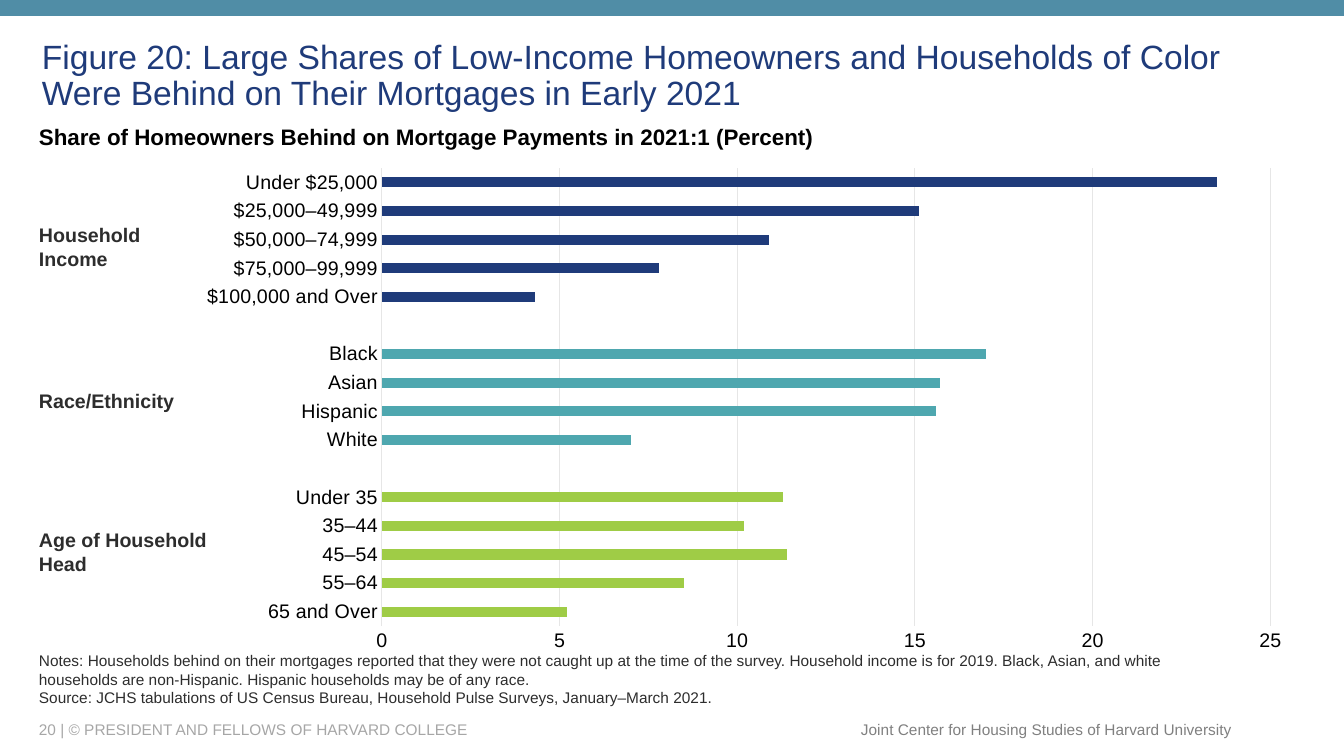
from dataclasses import dataclass

from lxml.etree import SubElement
from pptx import Presentation
from pptx.chart.data import CategoryChartData
from pptx.dml.color import RGBColor
from pptx.enum.chart import XL_CHART_TYPE, XL_TICK_MARK
from pptx.enum.shapes import MSO_SHAPE
from pptx.enum.text import MSO_ANCHOR, PP_ALIGN
from pptx.oxml.ns import qn
from pptx.util import Pt

EMU_PER_PX = 914400 / 100.8


@dataclass(frozen=True)
class Theme:
    font: str = "Arial"
    navy: str = "1F3B7A"
    teal: str = "4EA7AF"
    green: str = "9FCC46"
    banner: str = "508DA6"
    black: str = "000000"
    ink: str = "2D2D2D"
    footer: str = "A6A6A6"
    center_name: str = "808080"
    grid: str = "E6E6E6"
    title_size: int = 24
    subtitle_size: int = 16
    label_size: int = 14
    note_size: int = 11


THEME = Theme()

BAR_GROUPS = [
    (THEME.navy, [("Under $25,000", 23.5), ("$25,000–49,999", 15.1), ("$50,000–74,999", 10.9),
                  ("$75,000–99,999", 7.8), ("$100,000 and Over", 4.3)]),
    (THEME.teal, [("Black", 17), ("Asian", 15.7), ("Hispanic", 15.6), ("White", 7)]),
    (THEME.green, [("Under 35", 11.3), ("35–44", 10.2), ("45–54", 11.4),
                   ("55–64", 8.5), ("65 and Over", 5.2)]),
]

GROUP_LABELS = [
    ("Household Income", 218, 156),
    ("Race/Ethnicity", 384, 156),
    ("Age of Household Head", 523, 202),
]

NOTES = [
    "Notes: Households behind on their mortgages reported that they were not caught up at the time "
    "of the survey. Household income is for 2019. Black, Asian, and white households are "
    "non-Hispanic. Hispanic households may be of any race.",
    "Source: JCHS tabulations of US Census Bureau, Household Pulse Surveys, January–March 2021.",
]


def px(*lengths):
    return [round(length * EMU_PER_PX) for length in lengths]


def set_attributes(target, values):
    for name, value in values.items():
        setattr(target, name, value)


def style_font(font, size, color, bold=False):
    set_attributes(font, {"name": THEME.font, "size": Pt(size), "bold": bold})
    font.color.rgb = RGBColor.from_string(color)


def add_text(slide, box, paragraphs, size, color, bold=False, anchor=MSO_ANCHOR.TOP,
             align=PP_ALIGN.LEFT, line_spacing=None, wrap=True):
    frame = slide.shapes.add_textbox(*px(*box)).text_frame
    set_attributes(frame, {"word_wrap": wrap, "vertical_anchor": anchor})
    frame.text = "\n".join(paragraphs)
    for paragraph in frame.paragraphs:
        set_attributes(paragraph, {"alignment": align, "line_spacing": line_spacing})
        style_font(paragraph.font, size, color, bold)


def add_banner(slide):
    banner = slide.shapes.add_shape(MSO_SHAPE.RECTANGLE, *px(0, 0, 1344, 16))
    banner.shadow.inherit = False
    banner.fill.solid()
    banner.fill.fore_color.rgb = RGBColor.from_string(THEME.banner)
    banner.line.fill.background()


def chart_rows():
    """List (label, value, color) from bottom to top, with a gap row between groups."""
    rows = []
    for color, bars in reversed(BAR_GROUPS):
        if rows:
            rows.append(("", None, color))
        rows += [(label, value, color) for label, value in reversed(bars)]
    return rows


def place_plot_area(chart, fractions):
    """Fix the inner plot area, given as fractions of the chart frame."""
    plot_area = chart._chartSpace.chart.plotArea
    layout = plot_area.find(qn("c:layout"))
    if layout is None:
        layout = SubElement(plot_area, qn("c:layout"))
        plot_area.insert(0, layout)
    manual = SubElement(layout, qn("c:manualLayout"))
    settings = {"layoutTarget": "inner", "xMode": "edge", "yMode": "edge", **fractions}
    for name, value in settings.items():
        SubElement(manual, qn(f"c:{name}")).set("val", str(value))


def style_axis(axis):
    set_attributes(axis, {"major_tick_mark": XL_TICK_MARK.NONE,
                          "minor_tick_mark": XL_TICK_MARK.NONE})
    style_font(axis.tick_labels.font, THEME.label_size, THEME.black)


def style_grid_line(line):
    line.color.rgb = RGBColor.from_string(THEME.grid)
    line.width = Pt(0.75)


def add_share_chart(slide):
    rows = chart_rows()
    data = CategoryChartData()
    data.categories = [label for label, _, _ in rows]
    data.add_series("Series 1", [value for _, value, _ in rows])
    chart = slide.shapes.add_chart(XL_CHART_TYPE.BAR_CLUSTERED, *px(185, 159, 1119, 504), data).chart
    set_attributes(chart, {"has_legend": False, "has_title": False})
    style_font(chart.font, THEME.label_size, THEME.black)
    place_plot_area(chart, {"x": 0.176, "y": 0.018, "w": 0.794, "h": 0.909})

    style_axis(chart.category_axis)
    style_grid_line(chart.category_axis.format.line)
    value_axis = chart.value_axis
    style_axis(value_axis)
    set_attributes(value_axis, {"minimum_scale": 0, "maximum_scale": 25, "major_unit": 5,
                                "has_major_gridlines": True})
    value_axis.format.line.fill.background()
    style_grid_line(value_axis.major_gridlines.format.line)

    plot = chart.plots[0]
    set_attributes(plot, {"gap_width": 182, "vary_by_categories": False})
    series = plot.series[0]
    series.format.fill.solid()
    series.format.fill.fore_color.rgb = RGBColor.from_string(THEME.navy)
    for index, (_, value, color) in enumerate(rows):
        if value is not None:
            fill = series.points[index].format.fill
            fill.solid()
            fill.fore_color.rgb = RGBColor.from_string(color)


def main():
    presentation = Presentation()
    width, height = px(1344, 756)
    set_attributes(presentation, {"slide_width": width, "slide_height": height})
    slide = presentation.slides.add_slide(presentation.slide_layouts[6])

    add_text(slide, (29, 719, 798, 20), ["20 | © PRESIDENT AND FELLOWS OF HARVARD COLLEGE"],
             THEME.note_size, THEME.footer, anchor=MSO_ANCHOR.MIDDLE)
    add_text(slide, (849, 715, 393, 29), ["Joint Center for Housing Studies of Harvard University"],
             THEME.note_size, THEME.center_name, anchor=MSO_ANCHOR.MIDDLE,
             align=PP_ALIGN.RIGHT, wrap=False)
    add_banner(slide)
    add_text(slide, (32, 20, 1275, 98),
             ["Figure 20: Large Shares of Low-Income Homeowners and Households of Color "
              "Were Behind on Their Mortgages in Early 2021"],
             THEME.title_size, THEME.navy, anchor=MSO_ANCHOR.BOTTOM, line_spacing=0.9)
    add_share_chart(slide)
    add_text(slide, (29, 653, 1184, 59), NOTES, THEME.note_size, THEME.ink,
             anchor=MSO_ANCHOR.BOTTOM)
    add_text(slide, (29, 118, 1243, 37),
             ["Share of Homeowners Behind on Mortgage Payments in 2021:1 (Percent)"],
             THEME.subtitle_size, THEME.black, bold=True)
    for label, top, label_width in GROUP_LABELS:
        add_text(slide, (29, top, label_width, 37), [label], THEME.label_size, THEME.ink, bold=True)
    presentation.save("out.pptx")


if __name__ == "__main__":
    main()
